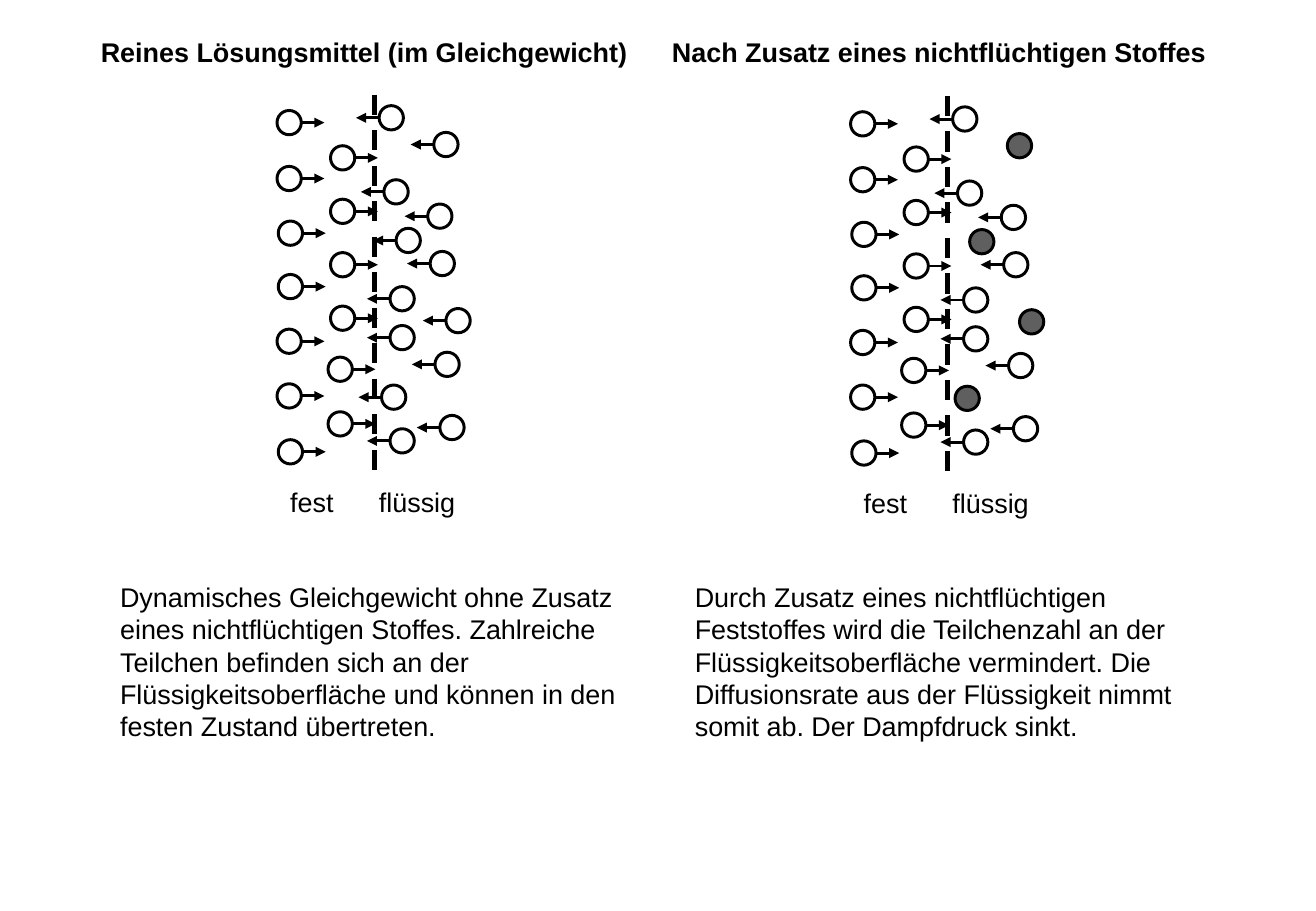
from pptx import Presentation
from pptx import util as u
from pptx.dml.color import RGBColor
from pptx.enum import dml, shapes, text
from pptx.oxml.ns import qn
from lxml import etree

BLACK, WHITE, GREY = "000000", "FFFFFF", "5F5F5F"
SIZE, ARROW = 0.2, 0.19

SOLID = [
    (2.28, 0.91), (2.72, 1.2), (2.28, 1.37), (2.72, 1.64), (2.29, 1.82),
    (2.72, 2.08), (2.29, 2.26), (2.72, 2.52), (2.7, 2.94), (2.7, 3.39),
    (2.28, 2.71), (2.28, 3.16), (2.29, 3.62),
]
LIQUID = [
    (3.12, 0.87), (3.57, 1.09), (3.16, 1.48), (3.52, 1.68), (3.26, 1.88),
    (3.54, 2.07), (3.21, 2.36), (3.67, 2.54), (3.21, 2.68), (3.58, 2.9),
    (3.14, 3.17), (3.21, 3.53), (3.62, 3.42),
]
SOLUTE = {(3.57, 1.09), (3.26, 1.88), (3.67, 2.54), (3.14, 3.17)}

PANELS = [
    dict(heading="Reines Lösungsmittel (im Gleichgewicht)",
         heading_box=(0.73, 0.24, 4.66, 0.37), idx=1, dx=0, dy=0,
         note="Dynamisches Gleichgewicht ohne Zusatz eines nichtflüchtigen "
              "Stoffes. Zahlreiche Teilchen befinden sich an der "
              "Flüssigkeitsoberfläche und können in den festen Zustand "
              "übertreten.",
         note_left=0.89, solute=set()),
    dict(heading="Nach Zusatz eines nichtflüchtigen Stoffes",
         heading_box=(5.43, 0.24, 4.72, 0.37), idx=3, dx=4.72, dy=0.01,
         note="Durch Zusatz eines nichtflüchtigen Feststoffes wird die "
              "Teilchenzahl an der Flüssigkeitsoberfläche vermindert. Die "
              "Diffusionsrate aus der Flüssigkeit nimmt somit ab. Der "
              "Dampfdruck sinkt.",
         note_left=5.62, solute=SOLUTE),
]


def rgb(value):
    return RGBColor.from_string(value)


class Diagram:
    """Draws headings, particles, arrows and labels in one style."""

    font, points, stroke = "Arial", 16, 1.75

    def __init__(self, s):
        self.s = s
        self.group = None

    def start_panel(self):
        self.group = self.s.shapes.add_group_shape()

    def add_text(self, sp, content, bold=False, wrap=False):
        tf = sp.text_frame
        tf.word_wrap = wrap
        tf.auto_size = text.MSO_AUTO_SIZE.NONE
        tf.vertical_anchor = text.MSO_ANCHOR.TOP
        p = tf.paragraphs[0]
        p.alignment = text.PP_ALIGN.LEFT
        p.space_before = u.Pt(0)
        r = p.add_run()
        r.text = content
        r.font.name = self.font
        r.font.size = u.Pt(self.points)
        r.font.bold = bold
        r.font.color.rgb = rgb(BLACK)

    def heading(self, idx, content, box):
        sp = next(ph for ph in self.s.placeholders
                  if ph.placeholder_format.idx == idx)
        sp.left, sp.top, sp.width, sp.height = map(u.Inches, box)
        self.add_text(sp, content, bold=True)

    def label(self, content, x, y, w, h, wrap=False):
        sp = self.group.shapes.add_textbox(*map(u.Inches, (x, y, w, h)))
        self.add_text(sp, content, wrap=wrap)

    def circle(self, x, y, fill):
        sp = self.group.shapes.add_shape(
            shapes.MSO_SHAPE.OVAL, *map(u.Inches, (x, y, SIZE, SIZE)))
        sp.shadow.inherit = False
        sp.fill.solid()
        sp.fill.fore_color.rgb = rgb(fill)
        sp.line.color.rgb = rgb(BLACK)
        sp.line.width = u.Pt(self.stroke)

    def line(self, x1, y1, x2, y2, width, dash=None):
        cx = self.group.shapes.add_connector(
            shapes.MSO_CONNECTOR.STRAIGHT, *map(u.Inches, (x1, y1, x2, y2)))
        cx.line.color.rgb = rgb(BLACK)
        cx.line.width = u.Pt(width)
        if dash:
            cx.line.dash_style = dash
        etree.SubElement(cx.element.spPr, qn("a:effectLst"))
        return cx

    def arrow(self, x1, x2, y):
        cx = self.line(x1, y, x2, y, self.stroke)
        ln = cx.element.spPr.find(qn("a:ln"))
        etree.SubElement(ln, qn("a:tailEnd"), type="triangle")

    def remove_empty(self):
        for ph in list(self.s.placeholders):
            if not ph.text_frame.text:
                ph.element.getparent().remove(ph.element)


def draw_panel(d, panel):
    dx, dy = panel["dx"], panel["dy"]
    d.heading(panel["idx"], panel["heading"], panel["heading_box"])
    d.start_panel()
    d.line(3.08 + dx, 0.78 + dy, 3.08 + dx, 3.93 + dy, 3,
           dml.MSO_LINE.DASH)
    for x, y in LIQUID:
        solute = (x, y) in panel["solute"]
        d.circle(x + dx, y + dy, GREY if solute else WHITE)
        if not solute:
            d.arrow(x + dx, x + dx - ARROW, y + dy + SIZE / 2)
    for x, y in SOLID:
        d.circle(x + dx, y + dy, WHITE)
        start = x + dx + SIZE
        d.arrow(start, start + ARROW, y + dy + SIZE / 2)
    d.label("fest", 2.29 + dx, 3.95 + dy, 0.56, 0.37)
    d.label("flüssig", 3.02 + dx, 3.95 + dy, 0.84, 0.37)
    d.label(panel["note"], panel["note_left"], 4.73, 4.33, 1.45, wrap=True)


def main():
    prs = Presentation()
    prs.slide_width, prs.slide_height = u.Inches(10.83), u.Inches(7.5)
    d = Diagram(prs.slides.add_slide(prs.slide_layouts.get_by_name("Comparison")))
    for panel in PANELS:
        draw_panel(d, panel)
    d.remove_empty()
    prs.save("out.pptx")


if __name__ == "__main__":
    main()
